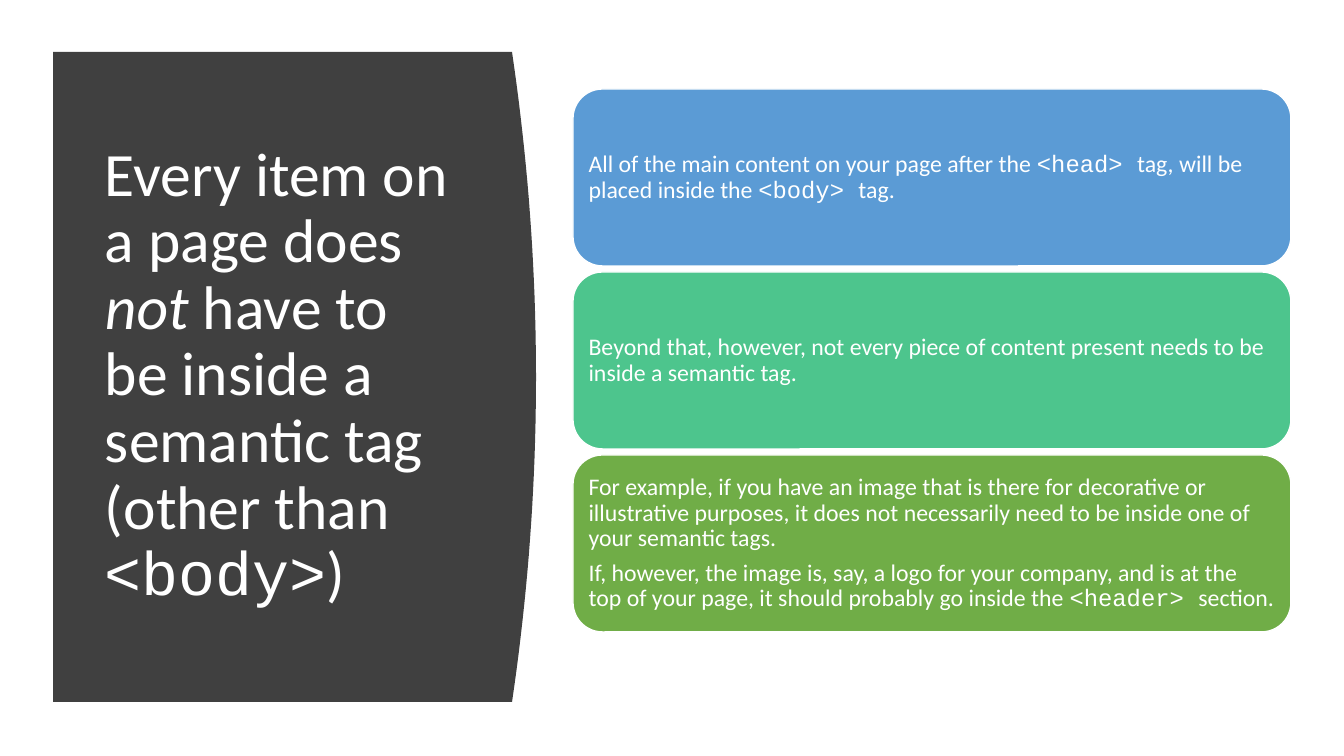
import pptx
import pptx.dml.color
import pptx.enum.shapes
import pptx.enum.text
import pptx.util

PX = 914400 / 100.8
COLORS = {"panel": "404040", "blue": "5B9BD5", "teal": "4DC58D",
          "green": "70AD47", "white": "FFFFFF"}
BODY_FONT, CODE_FONT = "Calibri", "Courier New"

# Each paragraph is a list of (words, style) runs.
HEADING = [[
    ("Every item on a page does ", ""), ("not", "italic"),
    (" have to be inside a semantic tag ", ""), ("\n", "break"),
    ("(other than ", ""), ("<body>", "code"), (")", ""),
]]
CARDS = [
    ("blue", [[
        ("All of the main content on your page after the ", ""),
        ("<head> ", "code"), ("tag, will be placed inside the ", ""),
        ("<body> ", "code"), ("tag.", ""),
    ]]),
    ("teal", [[
        ("Beyond that, however, not every piece of content present needs "
         "to be inside a semantic tag.", ""),
    ]]),
    ("green", [
        [("For example, if you have an image that is there for decorative or "
          "illustrative purposes, it does not necessarily need to be inside "
          "one of your semantic tags.", "")],
        [("If, however, the image is, say, a logo for your company, and is at "
          "the top of your page, it should probably go inside the ", ""),
         ("<header> ", "code"), ("section.", "")],
    ]),
]

PANEL_LEFT, PANEL_TOP, PANEL_CORNER, PANEL_BOTTOM = 53, 52, 512, 702
BULGE, CURVE_STEPS = 24, 40
HEADING_BOX = (95, 112, 377, 528)
CARD_LEFT, CARD_TOP, CARD_WIDTH, CARD_HEIGHT, CARD_GAP = 573, 89, 718, 177, 6


def emu(px):
    return pptx.util.Emu(round(px * PX))


def rgb(name):
    return pptx.dml.color.RGBColor.from_string(COLORS[name])


def paint(shape, fill):
    shape.shadow.inherit = False
    shape.fill.solid()
    shape.fill.fore_color.rgb = rgb(fill)


def write(shape, paragraphs, *, size, inset_x, inset_y, space_after=0):
    frame = shape.text_frame
    frame.word_wrap = True
    frame.vertical_anchor = pptx.enum.text.MSO_ANCHOR.MIDDLE
    frame.margin_left = frame.margin_right = emu(inset_x)
    frame.margin_top = frame.margin_bottom = emu(inset_y)
    for index, runs in enumerate(paragraphs):
        paragraph = frame.add_paragraph() if index else frame.paragraphs[0]
        paragraph.alignment = pptx.enum.text.PP_ALIGN.LEFT
        paragraph.line_spacing = 0.9
        paragraph.space_after = pptx.util.Pt(space_after)
        for words, style in runs:
            if style == "break":
                paragraph.add_line_break()
                continue
            run = paragraph.add_run()
            run.text = words
            run.font.size = pptx.util.Pt(size)
            run.font.name = CODE_FONT if style == "code" else BODY_FONT
            run.font.italic = style == "italic"
            run.font.color.rgb = rgb("white")


def add_panel(slide):
    """Draw the dark panel whose right side bows out as a parabola."""
    edge = []
    for step in range(CURVE_STEPS + 1):
        along = step / CURVE_STEPS
        x = PANEL_CORNER + BULGE * 4 * along * (1 - along)
        y = PANEL_TOP + (PANEL_BOTTOM - PANEL_TOP) * along
        edge.append((emu(x), emu(y)))
    builder = slide.shapes.build_freeform(emu(PANEL_LEFT), emu(PANEL_TOP))
    builder.add_line_segments(edge + [(emu(PANEL_LEFT), emu(PANEL_BOTTOM))])
    panel = builder.convert_to_shape()
    paint(panel, "panel")
    panel.line.fill.background()


def main():
    deck = pptx.Presentation()
    deck.slide_width, deck.slide_height = emu(1344), emu(756)
    slide = deck.slides.add_slide(deck.slide_layouts[6])

    add_panel(slide)
    heading = slide.shapes.add_textbox(*map(emu, HEADING_BOX))
    write(heading, HEADING, size=44, inset_x=10, inset_y=5)

    for row, (color, paragraphs) in enumerate(CARDS):
        top = CARD_TOP + row * (CARD_HEIGHT + CARD_GAP)
        card = slide.shapes.add_shape(
            pptx.enum.shapes.MSO_SHAPE.ROUNDED_RECTANGLE,
            emu(CARD_LEFT), emu(top), emu(CARD_WIDTH), emu(CARD_HEIGHT))
        paint(card, color)
        card.line.color.rgb = rgb("white")
        card.line.width = pptx.util.Pt(1)
        write(card, paragraphs, size=17, inset_x=7, inset_y=7, space_after=6)

    deck.save("out.pptx")


if __name__ == "__main__":
    main()
